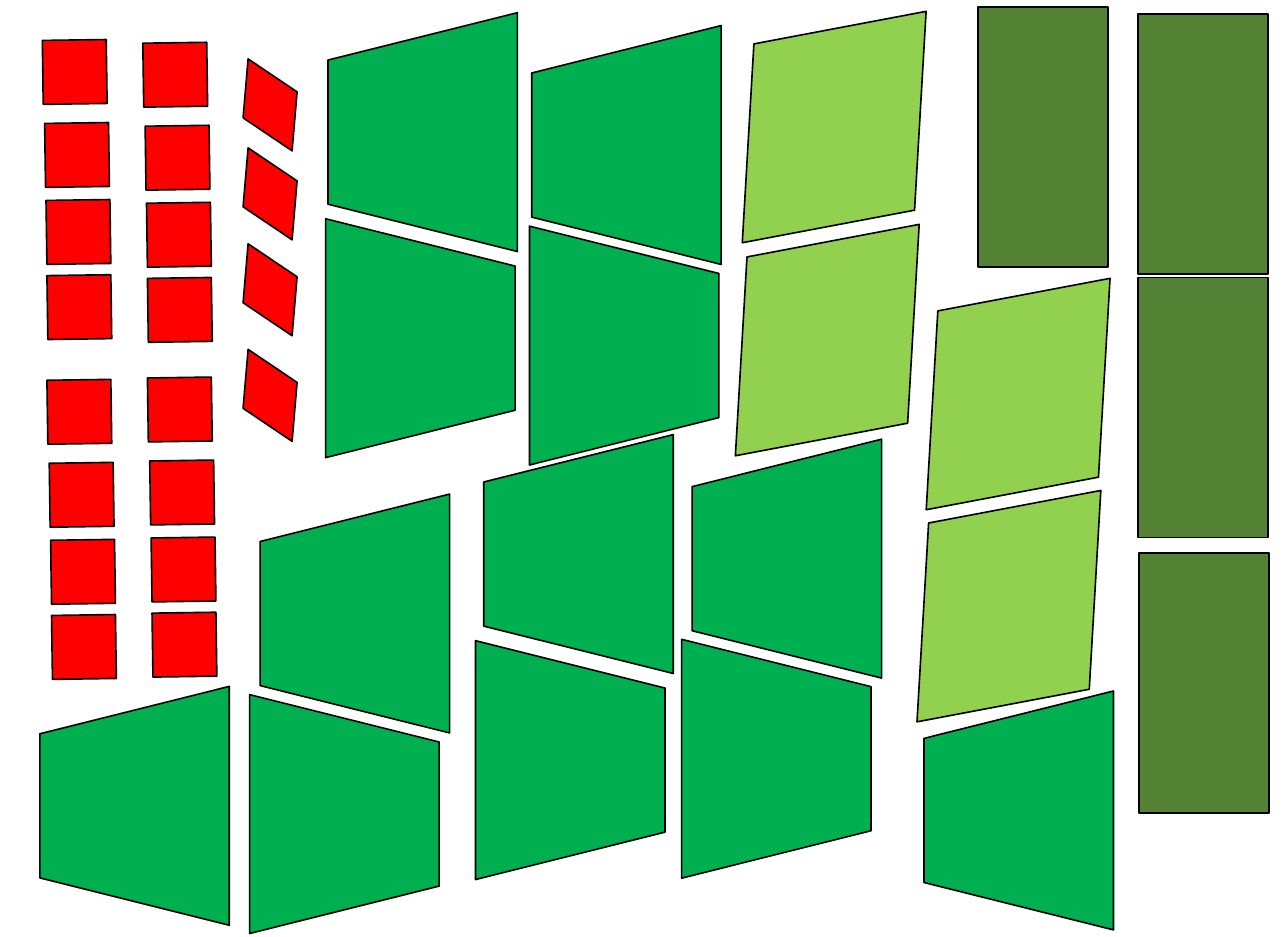
import pptx
import pptx.dml.color
import pptx.enum.shapes
import pptx.util

Cm = pptx.util.Cm
KIND = pptx.enum.shapes.MSO_SHAPE


def color(code):
    return pptx.dml.color.RGBColor.from_string(code)


class Board:
    """Holds the piece styles and the current slide."""

    line = {"width": pptx.util.Pt(1)}
    # name: preset, width, height, fill
    styles = {
        "trap": (KIND.TRAPEZOID, 5.18, 4.11, "00B050"),
        "slant": (KIND.PARALLELOGRAM, 4.85, 4.19, "92D050"),
        "block": (KIND.RECTANGLE, 2.82, 5.64, "548235"),
        "square": (KIND.DIAMOND, 1.96, 1.96, "FF0000"),
        "narrow": (KIND.DIAMOND, 1.3, 2.21, "FF0000"),
    }

    def __init__(self, slide):
        self.slide = slide

    def piece(self, name, left, top, turn, group=None):
        preset, width, height, fill = self.styles[name]
        owner = group or self.slide
        shape = owner.shapes.add_shape(
            preset, Cm(left), Cm(top), Cm(width), Cm(height))
        shape.rotation = turn
        shape.shadow.inherit = False
        shape.fill.solid()
        shape.fill.fore_color.rgb = color(fill)
        shape.line.color.rgb = color("000000")
        for key, value in self.line.items():
            setattr(shape.line, key, value)

    def pieces(self, name, turn, spots):
        for left, top in spots:
            self.piece(name, left, top, turn)

    def stack(self, left, top, steps):
        group = self.slide.shapes.add_group_shape()
        for right, down in steps:
            self.piece("square", left + right, top + down, 134.2, group)


def main():
    deck = pptx.Presentation()
    deck.slide_width, deck.slide_height = Cm(27.94), Cm(20.32)
    board = Board(deck.slides.add_slide(deck.slide_layouts[6]))

    # Trapezoids with the short side left, then right
    board.pieces("trap", 270, [
        (6.58, 0.81), (11, 1.09), (5.11, 11.25), (9.96, 9.96),
        (14.48, 10.06), (0.33, 15.42), (19.51, 15.52)])
    board.pieces("trap", 90, [
        (6.53, 5.28), (10.95, 5.44), (4.88, 15.6),
        (9.78, 14.43), (14.25, 14.4)])

    # Light slanted pieces and dark blocks
    board.pieces("slant", 169.3, [
        (15.67, 0.66), (15.52, 5.28), (19.66, 6.45), (19.46, 11.05)])
    board.pieces("block", 180, [
        (21.21, 0.15), (24.69, 0.3), (24.69, 6.02), (24.71, 11.99)])

    # Column of narrow red diamonds
    board.pieces("narrow", 334.4, [
        (5.21, top) for top in (1.17, 3.1, 5.18, 7.47)])

    # Four groups of red squares, each drifting slightly right
    steps = [(0, 0), (0.05, 1.8), (0.08, 3.47), (0.1, 5.1)]
    for left, top in [(0.64, 0.58), (0.74, 7.95), (2.82, 0.64), (2.92, 7.9)]:
        board.stack(left, top, steps)

    deck.save("out.pptx")


if __name__ == "__main__":
    main()
